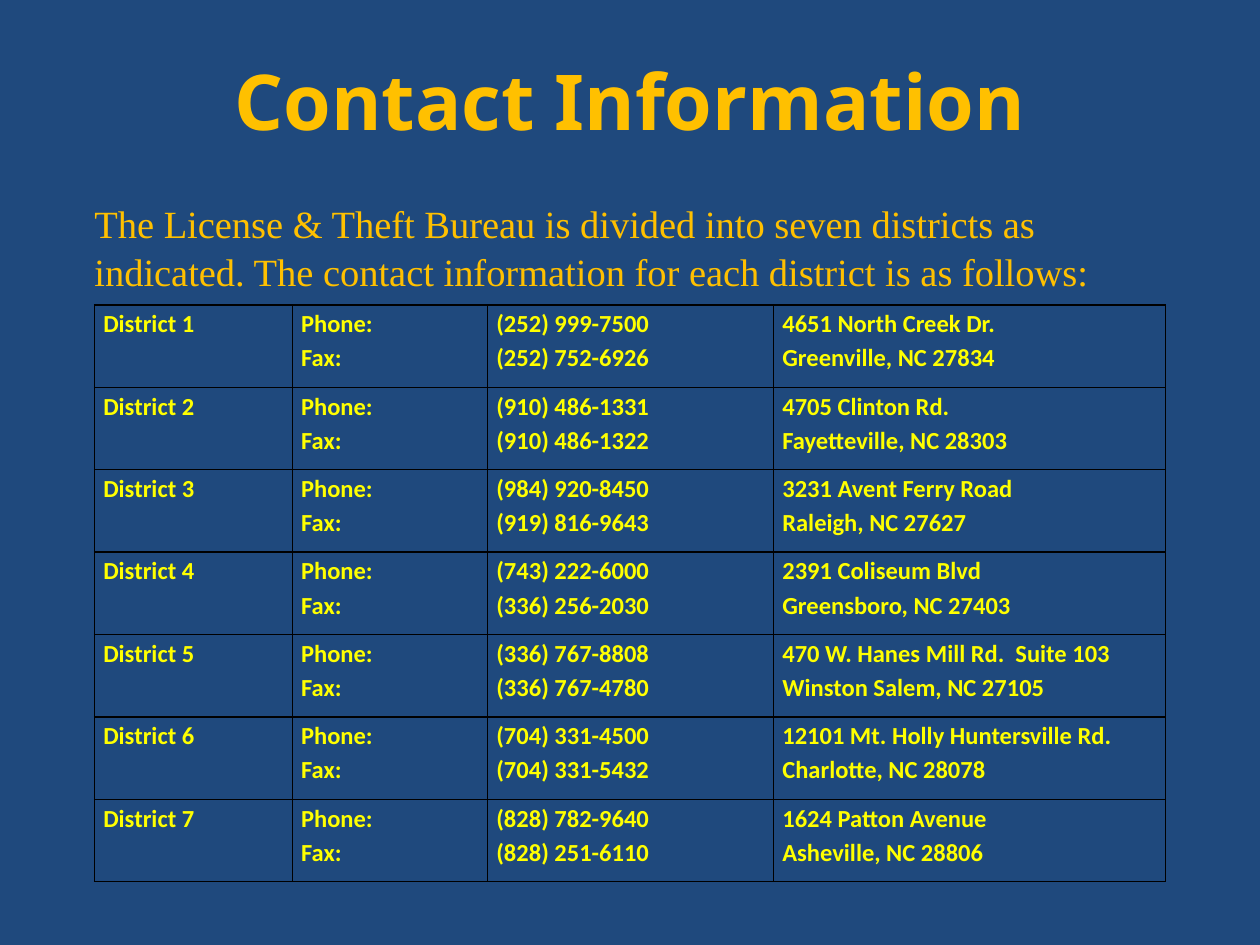
from lxml import etree
from pptx import Presentation
from pptx.dml.color import RGBColor
from pptx.enum.text import MSO_ANCHOR, PP_ALIGN
from pptx.oxml.ns import qn
from pptx.util import Inches, Pt

CENTER = PP_ALIGN.CENTER
MIDDLE = MSO_ANCHOR.MIDDLE

NAVY = RGBColor(0x1F, 0x49, 0x7D)
GOLD = RGBColor(0xFF, 0xC0, 0x00)
YELLOW = RGBColor(0xFF, 0xFF, 0x00)
BLACK = RGBColor(0x00, 0x00, 0x00)

INTRO = ("The License & Theft Bureau is divided into seven districts as indicated. "
         "The contact information for each district is as follows:")
COLUMN_WIDTHS = [1.57, 1.55, 2.27, 3.11]
DISTRICTS = [
    ("(252) 999-7500", "(252) 752-6926", "4651 North Creek Dr.\nGreenville, NC 27834"),
    ("(910) 486-1331", "(910) 486-1322", "4705 Clinton Rd.\nFayetteville, NC 28303"),
    ("(984) 920-8450", "(919) 816-9643", "3231 Avent Ferry Road\nRaleigh, NC 27627"),
    ("(743) 222-6000", "(336) 256-2030", "2391 Coliseum Blvd\nGreensboro, NC 27403"),
    ("(336) 767-8808", "(336) 767-4780", "470 W. Hanes Mill Rd.  Suite 103\nWinston Salem, NC 27105"),
    ("(704) 331-4500", "(704) 331-5432", "12101 Mt. Holly Huntersville Rd. Charlotte, NC 28078"),
    ("(828) 782-9640", "(828) 251-6110", "1624 Patton Avenue\nAsheville, NC 28806"),
]


def style_font(p, name, size, color, bold=False):
    p.font.name = name
    p.font.size = Pt(size)
    p.font.color.rgb = color
    p.font.bold = bold


def place_title(s, left, top, width, height):
    title = s.shapes.title
    title.left, title.top, title.width, title.height = left, top, width, height
    tf = title.text_frame
    tf.text = "Contact Information"
    tf.vertical_anchor = MIDDLE
    p = tf.paragraphs[0]
    p.alignment = CENTER
    style_font(p, "Noto Sans", 44, GOLD, True)


def add_intro(s, left, top, width, height):
    tf = s.shapes.add_textbox(left, top, width, height).text_frame
    tf.word_wrap = True
    tf.margin_left = Inches(0.25)
    p = tf.paragraphs[0]
    p.text = INTRO
    p.line_spacing = 1.05
    style_font(p, "Times New Roman", 22, GOLD)


def add_borders(cell):
    props = cell._tc.get_or_add_tcPr()
    for index, side in enumerate(("a:lnL", "a:lnR", "a:lnT", "a:lnB")):
        line = etree.Element(qn(side), w=str(Pt(1)))
        fill = etree.SubElement(line, qn("a:solidFill"))
        etree.SubElement(fill, qn("a:srgbClr"), val=str(BLACK))
        props.insert(index, line)


def fill_cell(cell, text):
    cell.margin_left = cell.margin_right = Inches(0.07)
    cell.margin_top = cell.margin_bottom = 0
    cell.fill.background()
    add_borders(cell)
    cell.text = text
    for p in cell.text_frame.paragraphs:
        p.line_spacing = 1.15
        style_font(p, "Calibri", 14, YELLOW, True)


def add_districts(s, left, top, width, height):
    table = s.shapes.add_table(len(DISTRICTS), len(COLUMN_WIDTHS),
                               left, top, width, height).table
    table.first_row = table.horz_banding = False
    for column, column_width in zip(table.columns, COLUMN_WIDTHS):
        column.width = Inches(column_width)
    for r, (phone, fax, address) in enumerate(DISTRICTS):
        texts = (f"District {r + 1}", "Phone:\nFax:", f"{phone}\n{fax}", address)
        for c, text in enumerate(texts):
            fill_cell(table.cell(r, c), text)


def main():
    prs = Presentation()
    prs.slide_width, prs.slide_height = Inches(10), Inches(7.5)
    s = prs.slides.add_slide(prs.slide_layouts[5])
    s.background.fill.solid()
    s.background.fill.fore_color.rgb = NAVY
    place_title(s, Inches(0.25), Inches(0.17), Inches(9.5), Inches(1.25))
    add_intro(s, Inches(0.5), Inches(1.52), Inches(9), Inches(0.85))
    add_districts(s, Inches(0.75), Inches(2.42), Inches(8.5), Inches(4.58))
    prs.save("out.pptx")


if __name__ == "__main__":
    main()
